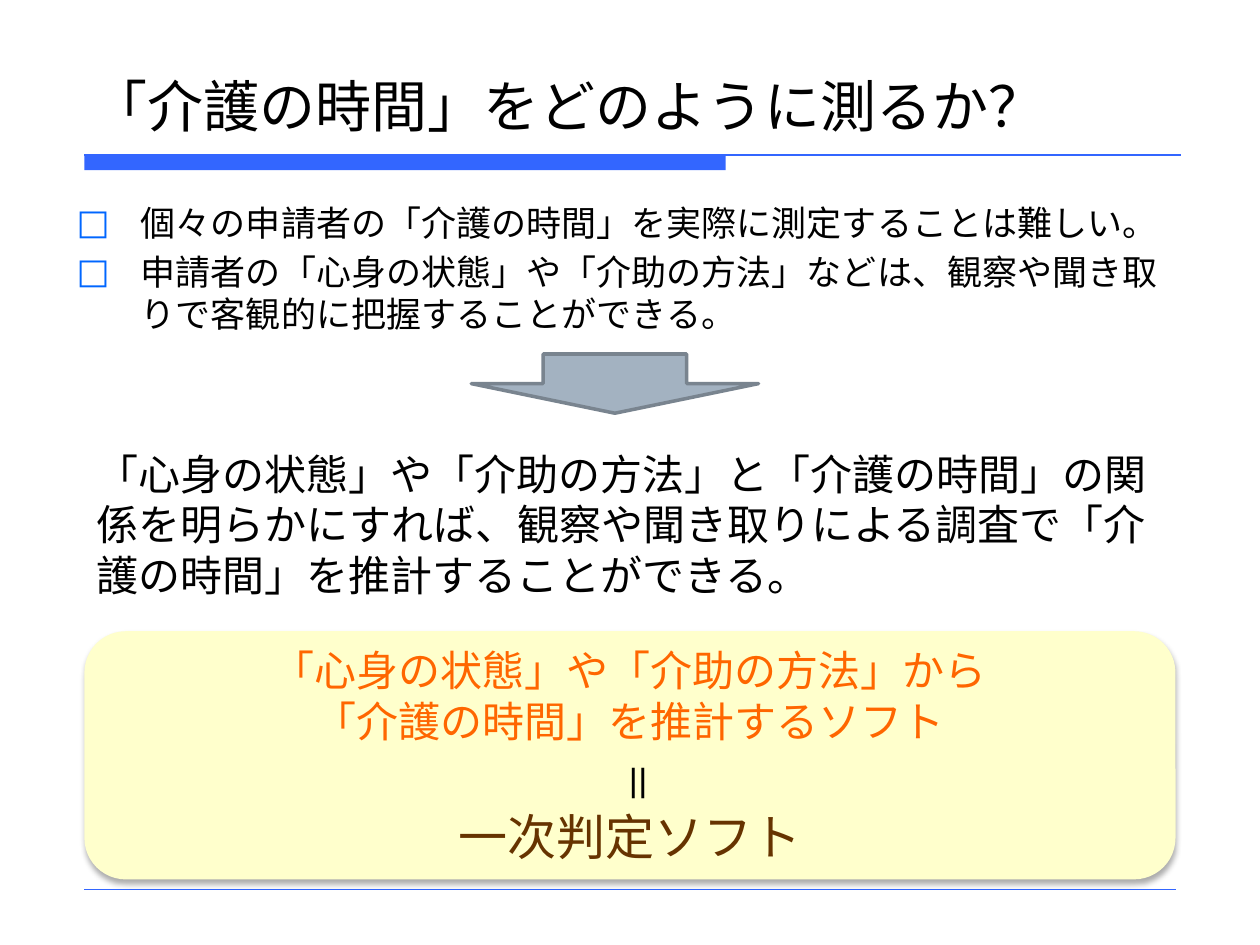
from lxml.etree import SubElement
from pptx import Presentation
from pptx.dml.color import RGBColor
from pptx.enum.shapes import MSO_CONNECTOR, MSO_SHAPE
from pptx.enum.text import MSO_ANCHOR, MSO_AUTO_SIZE, PP_ALIGN
from pptx.oxml.ns import qn
from pptx.util import Pt

PX = 9144  # 100 px to the inch
FONT = "DejaVu Sans"
COLORS = {
    "text": "000000", "rule": "3366FF", "bullet": "0066FF",
    "arrow": "A3B2C1", "edge": "79848F", "panel": "FFFFCC",
    "orange": "FF6600", "brown": "663300",
}


def rgb(name):
    return RGBColor.from_string(COLORS[name])


def write(shape, lines, **frame_set):
    """Fill a shape with (text, size, colour, paragraph settings) lines."""
    frame = shape.text_frame
    frame.word_wrap = True
    for key, value in frame_set.items():
        setattr(frame, key, value)
    for i, (text, size, color, para_set) in enumerate(lines):
        para = frame.add_paragraph() if i else frame.paragraphs[0]
        para.text = text
        for key, value in para_set.items():
            setattr(para, key, value)
        for run in para.runs:
            run.font.size = Pt(size)
            run.font.name = FONT
            run.font.color.rgb = rgb(color)
            SubElement(run.font._element, qn("a:ea"), typeface=FONT)


prs = Presentation()
prs.slide_width, prs.slide_height = 1000 * PX, 750 * PX
slide = prs.slides.add_slide(prs.slide_layouts[6])
shapes = slide.shapes

# Rules above and below the content
for right, y, width in ((937, 123, 0.75), (933, 706, 0.25)):
    rule = shapes.add_connector(
        MSO_CONNECTOR.STRAIGHT, 67 * PX, y * PX, right * PX, y * PX)
    rule.line.color.rgb = rgb("rule")
    rule.line.width = Pt(width)
    SubElement(rule._element.spPr, qn("a:effectLst"))

# Title bar, arrow and panel
solids = {}
for name, kind, box, fill, edge in (
    ("bar", MSO_SHAPE.RECTANGLE, (67, 123, 509, 12), "rule", None),
    ("arrow", MSO_SHAPE.DOWN_ARROW, (374, 281, 228, 47), "arrow", "edge"),
    ("panel", MSO_SHAPE.ROUNDED_RECTANGLE, (67, 501, 866, 197), "panel", None),
):
    shape = shapes.add_shape(kind, *(n * PX for n in box))
    shape.shadow.inherit = False
    shape.fill.solid()
    shape.fill.fore_color.rgb = rgb(fill)
    if edge:
        shape.line.color.rgb = rgb(edge)
        shape.line.width = Pt(2)
    else:
        shape.line.fill.background()
    solids[name] = shape

panel = solids["panel"]
effects = panel._element.spPr.find(qn("a:effectLst"))
shadow = SubElement(effects, qn("a:outerShdw"), blurRad=str(Pt(3.5)),
                    dist=str(Pt(2.2)), dir="5400000", rotWithShape="0")
tint = SubElement(shadow, qn("a:srgbClr"), val="000000")
SubElement(tint, qn("a:alpha"), val="32000")

center = {"alignment": PP_ALIGN.CENTER}
write(panel, [
    ("「心身の状態」や「介助の方法」から\v「介護の時間」を推計するソフト", 24, "orange",
     {**center, "space_before": Pt(5)}),
    ("一次判定ソフト", 28, "brown",
     {**center, "space_before": Pt(35), "space_after": Pt(3)}),
], vertical_anchor=MSO_ANCHOR.MIDDLE)

# Free text
title, points, claim, equal = (
    shapes.add_textbox(*(n * PX for n in box))
    for box in ((63, 33, 875, 82), (51, 155, 900, 118),
                (67, 351, 866, 142), (471, 595, 61, 55)))

write(title, [("「介護の時間」をどのように測るか？", 32, "text", {})],
      vertical_anchor=MSO_ANCHOR.BOTTOM)
write(points, [(text, 20, "text", {"space_before": Pt(4)}) for text in (
    "個々の申請者の「介護の時間」を実際に測定することは難しい。",
    "申請者の「心身の状態」や「介助の方法」などは、観察や聞き取りで客観的に把握することができる。",
)])
write(claim, [(
    "「心身の状態」や「介助の方法」と「介護の時間」の関係を明らかにすれば、"
    "観察や聞き取りによる調査で「介護の時間」を推計することができる。",
    24, "text", {"space_before": Pt(5)})])
write(equal, [("＝", 24, "text", {})], auto_size=MSO_AUTO_SIZE.SHAPE_TO_FIT_TEXT)
equal.text_frame._txBody.bodyPr.set("vert", "eaVert")

for para in points.text_frame.paragraphs:
    props = para._p.get_or_add_pPr()
    props.set("marL", str(51 * PX))
    props.set("indent", str(-51 * PX))
    tint = SubElement(props, qn("a:buClr"))
    SubElement(tint, qn("a:srgbClr"), val=COLORS["bullet"])
    SubElement(props, qn("a:buFont"), typeface=FONT)
    SubElement(props, qn("a:buChar"), char="□")

prs.save("out.pptx")
